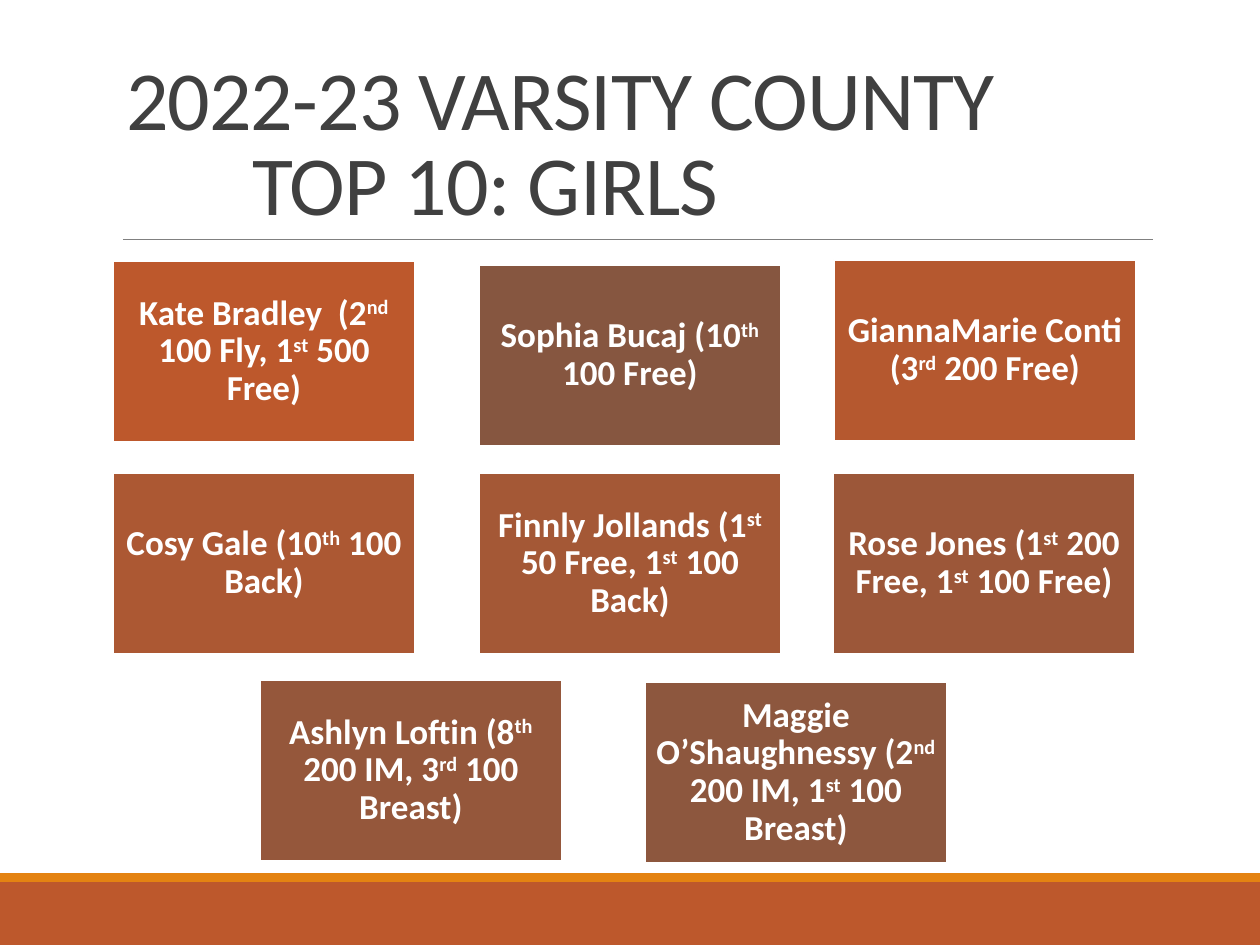
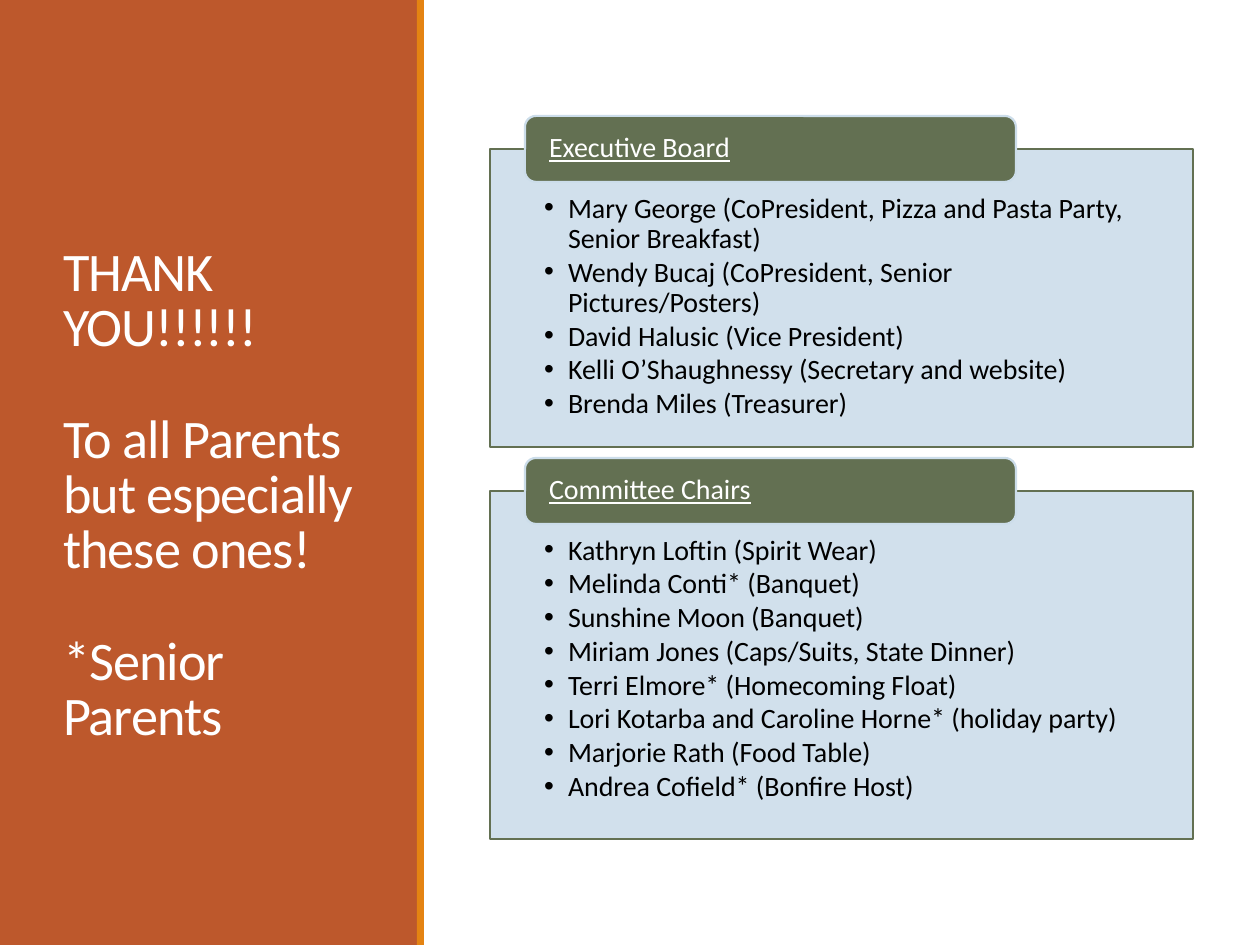
"""Build two swim team slides: the county top ten girls and the thank-you list."""
from dataclasses import dataclass

from lxml import etree
from pptx import Presentation
from pptx.dml.color import RGBColor
from pptx.enum.shapes import MSO_CONNECTOR, MSO_SHAPE
from pptx.enum.text import MSO_ANCHOR, MSO_AUTO_SIZE, PP_ALIGN
from pptx.oxml.ns import qn
from pptx.util import Emu, Pt

RECT = MSO_SHAPE.RECTANGLE
ROUND_RECT = MSO_SHAPE.ROUNDED_RECTANGLE
STRAIGHT = MSO_CONNECTOR.STRAIGHT
TOP, MIDDLE, BOTTOM = MSO_ANCHOR.TOP, MSO_ANCHOR.MIDDLE, MSO_ANCHOR.BOTTOM
LEFT, CENTER = PP_ALIGN.LEFT, PP_ALIGN.CENTER
NO_FIT = MSO_AUTO_SIZE.NONE

EMU_PER_PX = 914400 / 126
SLIDE_W, SLIDE_H = 1260, 945
FONT = "Calibri"
COLORS = {
    "rust": "BD582C", "orange": "E48312", "rule": "808080", "title": "404040",
    "white": "FFFFFF", "black": "000000", "moss": "637052", "ice": "CCDDEA",
    "card1": "BD582C", "card2": "B5582F", "card3": "AC5833", "card4": "A45836",
    "card5": "9C5739", "card6": "95573B", "card7": "8D573E", "card8": "865640",
}
CARD_W, CARD_H = 302, 181
PANEL_X, PANEL_W = 490, 703
TAB_DX, TAB_RISE, TAB_W, TAB_H = 35, 33, 491, 66
BULLET_INDENT = 24


@dataclass
class Box:
    x: int
    y: int
    w: int
    h: int


@dataclass
class Card:
    x: int
    y: int
    color: str
    text: str


@dataclass
class Panel:
    y: int
    h: int
    heading: str
    people: list[str]


CARDS = [
    Card(113, 261, "card1", "Kate Bradley  (2^nd^ 100 Fly, 1^st^ 500 Free)"),
    Card(834, 260, "card2", "GiannaMarie Conti (3^rd^ 200 Free)"),
    Card(113, 473, "card3", "Cosy Gale (10^th^ 100 Back)"),
    Card(479, 473, "card4", "Finnly Jollands (1^st^ 50 Free, 1^st^ 100 Back)"),
    Card(833, 473, "card5", "Rose Jones (1^st^ 200 Free, 1^st^ 100 Free)"),
    Card(260, 680, "card6", "Ashlyn Loftin (8^th^ 200 IM, 3^rd^ 100 Breast)"),
    Card(645, 682, "card7", "Maggie O’Shaughnessy (2^nd^ 200 IM, 1^st^ 100 Breast)"),
    Card(479, 265, "card8", "Sophia Bucaj (10^th^ 100 Free)"),
]
PANELS = [
    Panel(149, 298, "Executive Board", [
        "Mary George (CoPresident, Pizza and Pasta Party, Senior Breakfast)",
        "Wendy Bucaj (CoPresident, Senior Pictures/Posters)",
        "David Halusic (Vice President)",
        "Kelli O’Shaughnessy (Secretary and website)",
        "Brenda Miles (Treasurer)",
    ]),
    Panel(491, 348, "Committee Chairs", [
        "Kathryn Loftin (Spirit Wear)",
        "Melinda Conti* (Banquet)",
        "Sunshine Moon (Banquet)",
        "Miriam Jones (Caps/Suits, State Dinner)",
        "Terri Elmore* (Homecoming Float)",
        "Lori Kotarba and Caroline Horne* (holiday party)",
        "Marjorie Rath (Food Table)",
        "Andrea Cofield* (Bonfire Host)",
    ]),
]


def px(n: float) -> Emu:
    return Emu(round(n * EMU_PER_PX))


def rgb(name: str) -> RGBColor:
    return RGBColor.from_string(COLORS[name])


def place(sp, box: Box) -> None:
    sp.left, sp.top, sp.width, sp.height = map(px, (box.x, box.y, box.w, box.h))


def paint(sp, fill: str, line: str | None = None) -> None:
    sp.fill.solid()
    sp.fill.fore_color.rgb = rgb(fill)
    if line:
        sp.line.color.rgb = rgb(line)
        sp.line.width = Pt(1.25)
    else:
        sp.line.fill.background()


def add_box(s, kind, box: Box, fill: str, line: str | None = None):
    sp = s.shapes.add_shape(kind, *map(px, (box.x, box.y, box.w, box.h)))
    sp.shadow.inherit = False
    paint(sp, fill, line)
    return sp


def setup_frame(tf, anchor, insets: tuple[int, int, int, int]) -> None:
    tf.word_wrap = True
    tf.auto_size = NO_FIT
    tf.vertical_anchor = anchor
    tf.margin_left, tf.margin_top, tf.margin_right, tf.margin_bottom = map(px, insets)


def format_paragraph(p, size: int, color: str, align=LEFT, spacing: float = 0.9) -> None:
    p.alignment = align
    p.line_spacing = spacing
    p.space_before = Pt(0)
    for r in p.runs:
        r.font.name = FONT
        r.font.size = Pt(size)
        r.font.color.rgb = rgb(color)


def set_title(s, box: Box, lines: list[str], size: int, color: str, anchor) -> list:
    sp = s.shapes.title
    place(sp, box)
    tf = sp.text_frame
    tf.text = "\n".join(lines)
    setup_frame(tf, anchor, (13, 6, 13, 6))
    for p in tf.paragraphs:
        format_paragraph(p, size, color, spacing=0.85)
        for r in p.runs:
            r.font._element.set("spc", "-50")
    return list(tf.paragraphs)


def add_rule(s, x1: int, x2: int, y: int) -> None:
    line = s.shapes.add_connector(STRAIGHT, px(x1), px(y), px(x2), px(y))
    line.line.color.rgb = rgb("rule")
    line.line.width = Pt(0.5)
    etree.SubElement(line.element.spPr, qn("a:effectLst"))


def add_card(s, card: Card) -> None:
    sp = add_box(s, RECT, Box(card.x, card.y, CARD_W, CARD_H), card.color, "white")
    tf = sp.text_frame
    setup_frame(tf, MIDDLE, (10, 10, 10, 10))
    p = tf.paragraphs[0]
    for i, part in enumerate(card.text.split("^")):
        r = p.add_run()
        r.text = part
        r.font.bold = True
        if i % 2:
            r.font._element.set("baseline", "30000")
    format_paragraph(p, 20, "white", CENTER)


def add_bullet(p) -> None:
    pPr = p._p.get_or_add_pPr()
    pPr.set("marL", str(px(BULLET_INDENT)))
    pPr.set("indent", str(-px(BULLET_INDENT)))
    etree.SubElement(pPr, qn("a:buChar")).set("char", "•")


def fill_panel(s, body, panel: Panel) -> None:
    place(body, Box(PANEL_X, panel.y, PANEL_W, panel.h))
    paint(body, "ice", "moss")
    color = body.element.spPr.find(qn("a:solidFill")).find(qn("a:srgbClr"))
    etree.SubElement(color, qn("a:alpha")).set("val", "90000")
    tf = body.text_frame
    tf.text = "\n".join(panel.people)
    setup_frame(tf, TOP, (54, 45, 54, 15))
    for p in tf.paragraphs:
        add_bullet(p)
        format_paragraph(p, 16, "black")
        p.space_after = Pt(2)

    tab = Box(PANEL_X + TAB_DX, panel.y - TAB_RISE, TAB_W, TAB_H)
    tf = add_box(s, ROUND_RECT, tab, "moss", "ice").text_frame
    tf.text = panel.heading
    setup_frame(tf, MIDDLE, (21, 0, 21, 0))
    p = tf.paragraphs[0]
    format_paragraph(p, 16, "white")
    p.runs[0].font.underline = True


def build_top_ten(prs) -> None:
    s = prs.slides.add_slide(prs.slide_layouts[5])
    add_box(s, RECT, Box(0, 882, SLIDE_W, 63), "rust")
    add_box(s, RECT, Box(0, 873, SLIDE_W, 9), "orange")
    add_rule(s, 123, 1153, 239)
    lines = ["2022-23 VARSITY COUNTY", "TOP 10: GIRLS"]
    title = set_title(s, Box(113, 39, 1040, 200), lines, 48, "title", BOTTOM)
    title[1]._p.get_or_add_pPr().set("marL", str(px(126)))
    for card in CARDS:
        add_card(s, card)


def build_thank_you(prs) -> None:
    s = prs.slides.add_slide(prs.slide_layouts[3])
    side = add_box(s, RECT, Box(0, 0, 418, SLIDE_H), "rust")
    s.shapes.element.insert(2, side.element)
    add_box(s, RECT, Box(417, 0, 7, SLIDE_H), "orange")
    lines = ["THANK YOU!!!!!!", "To all Parents but especially these ones!", "*Senior Parents"]
    title = set_title(s, Box(50, 127, 319, 740), lines, 31, "white", MIDDLE)
    for p in title[1:]:
        p.space_before = Pt(32)
    for i, panel in enumerate(PANELS, start=1):
        fill_panel(s, s.placeholders[i], panel)


def main() -> None:
    prs = Presentation()
    prs.slide_width, prs.slide_height = px(SLIDE_W), px(SLIDE_H)
    build_top_ten(prs)
    build_thank_you(prs)
    prs.save("out.pptx")


if __name__ == "__main__":
    main()
